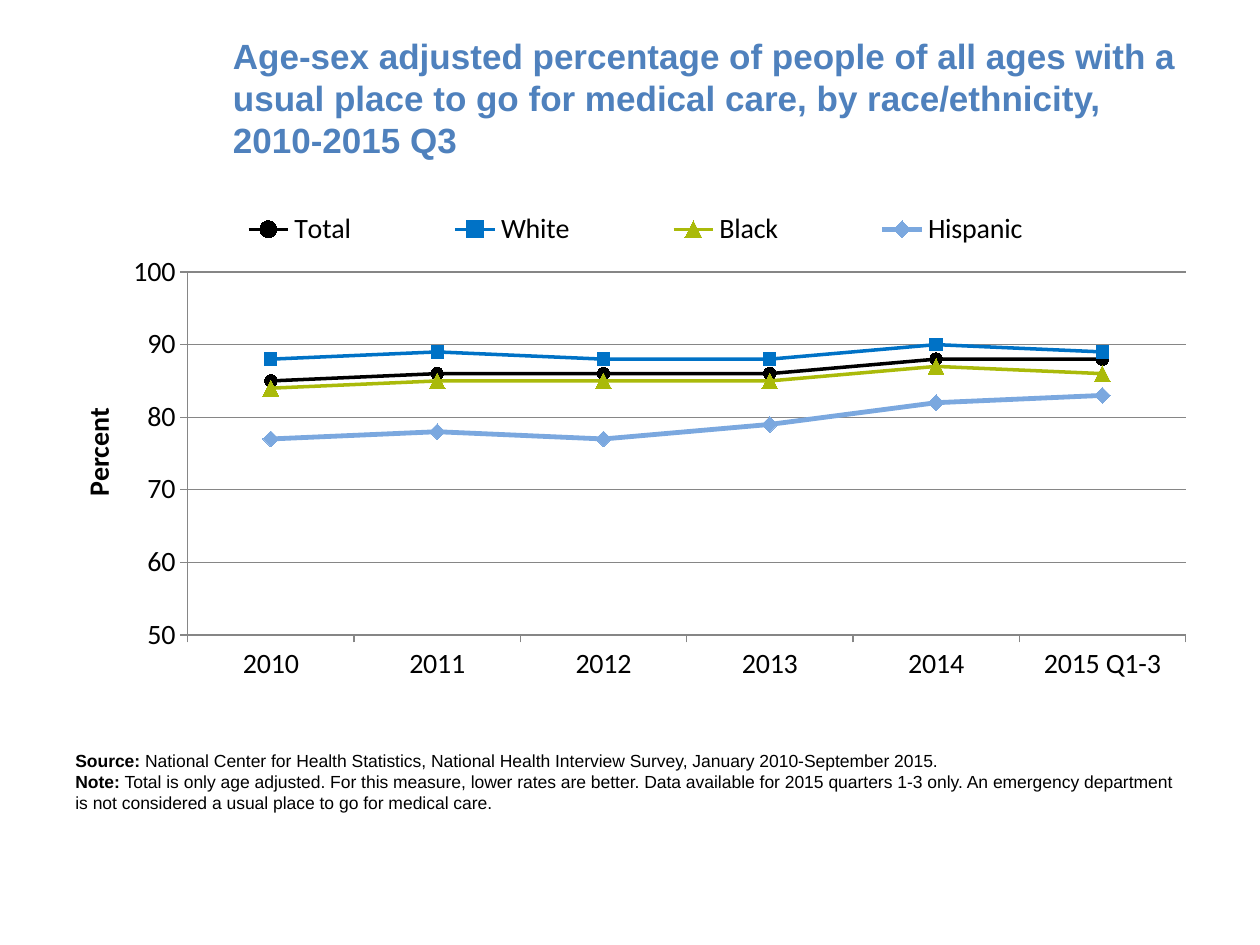
from lxml.etree import SubElement
from pptx import Presentation
from pptx.chart.data import CategoryChartData
from pptx.dml.color import RGBColor
from pptx.enum.chart import (XL_CHART_TYPE, XL_LEGEND_POSITION,
                             XL_MARKER_STYLE, XL_TICK_MARK)
from pptx.enum.text import MSO_ANCHOR
from pptx.oxml.ns import qn
from pptx.util import Pt

BLACK = RGBColor(0x00, 0x00, 0x00)
GRAY = RGBColor(0x86, 0x86, 0x86)
TITLE = RGBColor(0x4F, 0x81, 0xBD)
BLUE = RGBColor(0x00, 0x72, 0xC6)
GREEN = RGBColor(0xAA, 0xBA, 0x0A)
LIGHT = RGBColor(0x7B, 0xA8, 0xDF)


def add_run(para, text, size, color, bold):
    run = para.add_run()
    run.text = text
    run.font.name = "Arial"
    run.font.size = Pt(size)
    run.font.bold = bold
    run.font.color.rgb = color


def set_layout(node, index, **spots):
    """Fix a chart part's place, in fractions of the chart's size."""
    old = node.find(qn("c:layout"))
    if old is not None:
        node.remove(old)
    layout = SubElement(node, qn("c:layout"))
    node.insert(index, layout)
    manual = SubElement(layout, qn("c:manualLayout"))
    if index == 0:
        SubElement(manual, qn("c:layoutTarget")).set("val", "inner")
    for mode in ("xMode", "yMode"):
        SubElement(manual, qn("c:" + mode)).set("val", "edge")
    for key, val in spots.items():
        SubElement(manual, qn("c:" + key)).set("val", str(val))


prs = Presentation()
prs.slide_width, prs.slide_height = Pt(720), Pt(540)
slide = prs.slides.add_slide(prs.slide_layouts[6])

# Title
box = slide.shapes.add_textbox(Pt(126), Pt(21.6), Pt(558), Pt(68.4))
frame = box.text_frame
frame.word_wrap = True
frame.vertical_anchor = MSO_ANCHOR.MIDDLE
add_run(frame.paragraphs[0],
        "Age-sex adjusted percentage of people of all ages with a usual place "
        "to go for medical care, by race/ethnicity, 2010-2015 Q3",
        20, TITLE, True)

# Source and note
notes = [
    ("Source: ", "National Center for Health Statistics, National Health "
     "Interview Survey, January 2010-September 2015."),
    ("Note: ", "Total is only age adjusted. For this measure, lower rates are "
     "better. Data available for 2015 quarters 1-3 only. An emergency "
     "department is not considered a usual place to go for medical care."),
]
box = slide.shapes.add_textbox(Pt(36), Pt(424.8), Pt(648), Pt(43.9))
frame = box.text_frame
frame.word_wrap = True
for i, (label, text) in enumerate(notes):
    para = frame.add_paragraph() if i else frame.paragraphs[0]
    add_run(para, label, 10, BLACK, True)
    add_run(para, text, 10, BLACK, False)

# Line chart: name, values, color, line width, marker, marker size
groups = [
    ("Total", (85, 86, 86, 86, 88, 88), BLACK, 2, XL_MARKER_STYLE.CIRCLE, 7),
    ("White", (88, 89, 88, 88, 90, 89), BLUE, 2, XL_MARKER_STYLE.SQUARE, 7),
    ("Black", (84, 85, 85, 85, 87, 86), GREEN, 2, XL_MARKER_STYLE.TRIANGLE, 9),
    ("Hispanic", (77, 78, 77, 79, 82, 83), LIGHT, 2.75,
     XL_MARKER_STYLE.DIAMOND, 9),
]
data = CategoryChartData(number_format="0")
data.categories = ["2010", "2011", "2012", "2013", "2014", "2015 Q1-3"]
for name, vals, *_ in groups:
    data.add_series(name, vals)
chart = slide.shapes.add_chart(XL_CHART_TYPE.LINE_MARKERS, Pt(36), Pt(115.2),
                               Pt(648), Pt(288), data).chart
chart.has_title = False
chart.font.name = "Calibri"
chart.font.size = Pt(16)
chart.font.color.rgb = BLACK
chart.plots[0].vary_by_categories = False

for line, (_, _, color, width, style, size) in zip(chart.series, groups):
    line.smooth = False
    line.format.line.color.rgb = color
    line.format.line.width = Pt(width)
    mark = line.marker
    mark.style = style
    mark.size = size
    mark.format.fill.solid()
    mark.format.fill.fore_color.rgb = color
    mark.format.line.color.rgb = color

years, rates = chart.category_axis, chart.value_axis
for axis in (years, rates):
    axis.major_tick_mark = XL_TICK_MARK.OUTSIDE
    axis.minor_tick_mark = XL_TICK_MARK.NONE
    axis.format.line.color.rgb = GRAY
    axis.tick_labels.font.size = Pt(16)
    axis.tick_labels.font.name = "Calibri"
rates.minimum_scale, rates.maximum_scale = 50, 100
rates.major_unit = 10
rates.tick_labels.number_format = "0"
rates.tick_labels.number_format_is_linked = False
rates.has_major_gridlines = True
rates.major_gridlines.format.line.color.rgb = GRAY

title = rates.axis_title.text_frame
title.text = "Percent"
font = title.paragraphs[0].runs[0].font
font.name, font.size, font.bold = "Calibri", Pt(16), True
font.color.rgb = BLACK

chart.has_legend = True
legend = chart.legend
legend.position = XL_LEGEND_POSITION.TOP
legend.include_in_layout = False
legend.font.name = "Calibri"
legend.font.size = Pt(16)

area = chart.plots[0]._element.getparent()
set_layout(area, 0, x=0.11, y=0.14, w=0.88, h=0.72)
set_layout(legend._element, 1, x=0.08, y=0.01, w=0.85, h=0.09)
set_layout(rates.axis_title._element, 1, x=0.01, y=0.4)

prs.save("out.pptx")
